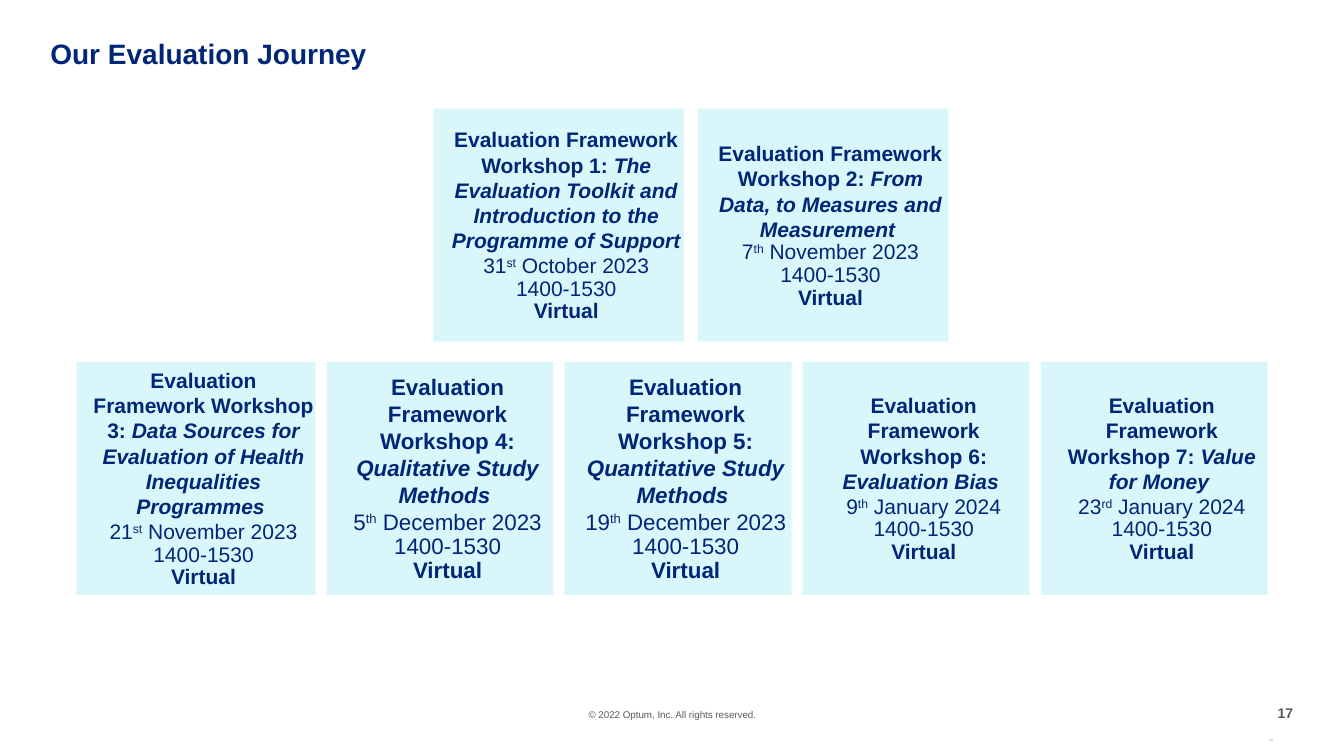
from pptx import Presentation
from pptx import util as u
from pptx.dml.color import RGBColor
from pptx.enum import shapes, text

NAVY, PALE, GREY, BLUE = "002677", "D9F6FA", "5A5A5A", "005EB8"
CENTER, RIGHT = text.PP_ALIGN.CENTER, text.PP_ALIGN.RIGHT
MIDDLE, BOTTOM = text.MSO_ANCHOR.MIDDLE, text.MSO_ANCHOR.BOTTOM
CARD_HEIGHT = 5.87

FIRST_WORKSHOPS = [
    (1, "The Evaluation Toolkit and Introduction to the", "Programme of Support ",
     "31", "st", "October 2023", 15, None),
    (2, "From Data, to Measures and Measurement ", "", "7", "th", "November 2023", 15, 0.9),
]
LATER_WORKSHOPS = [
    (3, "Data Sources for Evaluation of Health Inequalities Programmes ", "",
     "21", "st", "November 2023", 15, None),
    (4, "Qualitative Study Methods ", "", "5", "th", "December 2023", 16, None),
    (5, "Quantitative Study Methods ", "", "19", "th", "December 2023", 16, None),
    (6, "Evaluation Bias ", "", "9", "th", "January 2024", 15, None),
    (7, "Value for Money ", "", "23", "rd", "January 2024", 15, None),
]


def colour(code):
    """Turn a hex string into a colour."""
    return RGBColor.from_string(code)


def apply(target, **values):
    """Set each given attribute on the target."""
    for name, value in values.items():
        setattr(target, name, value)


def add_span(para, words, size, shade, raised=False, **style):
    """Add one formatted run to a paragraph."""
    span = para.add_run()
    span.text = words
    apply(span.font, name="Arial", size=u.Pt(size), **style)
    span.font.color.rgb = colour(shade)
    if raised:
        span.font._element.set("baseline", "30000")


def add_label(page, box, words, size, shade, inset=0, wrap=True, anchor=text.MSO_ANCHOR.TOP,
              align=None, spacing=None, bold=False):
    """Place a single line of text in the given box."""
    frame = page.shapes.add_textbox(*map(u.Cm, box)).text_frame
    margins = dict.fromkeys(("margin_left", "margin_right", "margin_top", "margin_bottom"),
                            u.Cm(inset))
    apply(frame, word_wrap=wrap, vertical_anchor=anchor, **margins)
    para = frame.paragraphs[0]
    apply(para, alignment=align, line_spacing=spacing)
    add_span(para, words, size, shade, bold=bold)


def add_card(parent, box, workshop):
    """Draw one workshop card in the given box."""
    number, topic, topic_end, day, suffix, month, size, date_spacing = workshop
    card = parent.add_shape(shapes.MSO_SHAPE.RECTANGLE, *map(u.Cm, box))
    card.name = f"Workshop {number}"
    card.shadow.inherit = False
    card.fill.solid()
    card.fill.fore_color.rgb = colour(PALE)
    card.line.fill.background()
    frame = card.text_frame
    apply(frame, word_wrap=True, vertical_anchor=MIDDLE, margin_left=u.Cm(0.38),
          margin_right=0, margin_top=0, margin_bottom=0)
    bold, italic = {"bold": True}, {"bold": True, "italic": True}
    lines = [
        (None, [(f"Evaluation Framework Workshop {number}: ", bold), (topic, italic)]),
        (date_spacing, [(topic_end, italic), (day, {}), (suffix, {"raised": True}),
                        (f" {month}", {})]),
        (0.9, [("1400-1530", {})]),
        (0.9, [("Virtual", bold)]),
    ]
    for index, (spacing, spans) in enumerate(lines):
        para = frame.add_paragraph() if index else frame.paragraphs[0]
        apply(para, alignment=CENTER, line_spacing=spacing)
        for words, style in spans:
            if words:
                add_span(para, words, size, NAVY, **style)


def add_row(parent, left, top, widths, gap, workshops):
    """Set workshop cards side by side from the given corner."""
    for width, workshop in zip(widths, workshops):
        add_card(parent, (left, top, width, CARD_HEIGHT), workshop)
        left += width + gap


def add_footer(page, left, top):
    """Place the copyright line and page numbers from the given corner."""
    add_label(page, (left, top + 0.1, 7.77, 0.3), "© 2022 Optum, Inc. All rights reserved.",
              7, GREY, align=CENTER)
    add_label(page, (left + 19.1, top, 0.43, 0.43), "17", 10, GREY,
              wrap=False, align=RIGHT, bold=True)
    add_label(page, (left + 18.94, top + 0.87, 1.7, 0.08), "17", 2, BLUE, anchor=MIDDLE)


def main():
    """Build and save the deck."""
    deck = Presentation()
    apply(deck, slide_width=u.Cm(33.87), slide_height=u.Cm(19.05))
    page = deck.slides.add_slide(deck.slide_layouts[6])
    add_footer(page, 13.06, 17.75)
    add_label(page, (1.02, 0, 32.69, 2.03), "Our Evaluation Journey", 20, NAVY,
              inset=0.25, anchor=BOTTOM, spacing=0.9, bold=True)
    later = page.shapes.add_group_shape()
    add_row(later.shapes, 1.93, 9.12, [6.02] + [5.72] * 4, 0.28, LATER_WORKSHOPS)
    add_row(page.shapes, 10.92, 2.74, [6.32] * 2, 0.34, FIRST_WORKSHOPS)
    deck.save("out.pptx")


if __name__ == "__main__":
    main()
